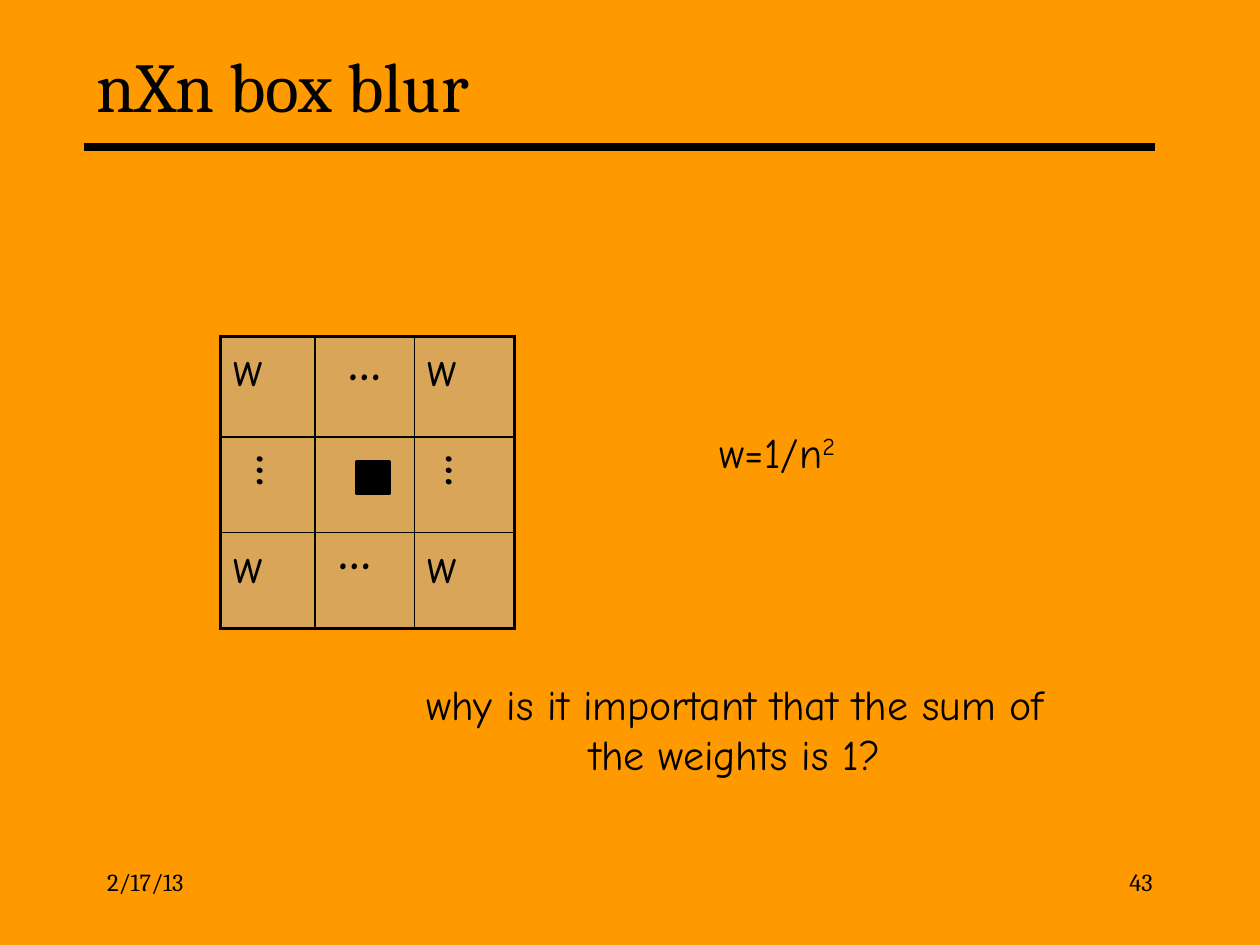
from lxml.etree import SubElement
from pptx import Presentation
from pptx.dml.color import RGBColor
from pptx.enum.shapes import MSO_CONNECTOR as CONN, MSO_SHAPE as SHAPE
from pptx.enum.text import MSO_ANCHOR as ANCHOR, MSO_AUTO_SIZE as AUTO, PP_ALIGN as ALIGN
from pptx.oxml import parse_xml
from pptx.oxml.ns import nsdecls, qn
from pptx.util import Cm, Pt

ORANGE = RGBColor(0xFF, 0x99, 0x00)
BLACK = RGBColor(0, 0, 0)
GRAY = RGBColor(0xB2, 0xB2, 0xB2)
SERIF = "Cambria"
COMIC = "Comic Neue"
COLS = (1.9, 2.01, 2.01)
ROWS = (2.03, 1.93, 1.93)
THICK, THIN = Pt(2.25), Pt(1)


def style(p, name, size, align=None, before=None, bold=None):
    p.alignment = align
    p.space_before = before
    p.font.name = name
    p.font.size = Pt(size)
    p.font.bold = bold
    p.font.color.rgb = BLACK


def add_title(s, text):
    sp = s.shapes.title
    sp.left, sp.top, sp.width, sp.height = Cm(1.7), Cm(0.64), Cm(21.59), Cm(2.11)
    sp.text_frame.text = text
    sp.text_frame.vertical_anchor = ANCHOR.MIDDLE
    style(sp.text_frame.paragraphs[0], SERIF, 40, ALIGN.LEFT)


def add_rule(s, left, right, y):
    c = s.shapes.add_connector(CONN.STRAIGHT, left, y, right, y)
    c.line.color.rgb = BLACK
    c.line.width = Pt(4.5)
    SubElement(c._element.spPr, qn("a:effectLst"))


def add_text(s, text, left, top, width, height, name, size, align=ALIGN.CENTER, before=None):
    sp = s.shapes.add_textbox(left, top, width, height)
    tf = sp.text_frame
    tf.word_wrap = True
    p = tf.paragraphs[0]
    p.text = text
    style(p, name, size, align, before)
    return sp


def add_dots(s, left, top, rotation=0):
    sp = add_text(s, "…", left, top, Cm(1.17), Cm(1.45), COMIC, 28, before=Pt(14))
    sp.rotation = rotation
    tf = sp.text_frame
    tf.word_wrap = False
    tf.auto_size = AUTO.SHAPE_TO_FIT_TEXT
    tf.vertical_anchor = ANCHOR.MIDDLE
    tf.paragraphs[0].font.bold = True


def set_borders(cell, widths):
    tcPr = cell._tc.get_or_add_tcPr()
    for i, (side, width) in enumerate(zip("LRTB", widths)):
        tcPr.insert(i, parse_xml(
            f'<a:ln{side} {nsdecls("a")} w="{width}"><a:solidFill>'
            f'<a:srgbClr val="{BLACK}"/></a:solidFill></a:ln{side}>'))


def set_fill(cell):
    cell.fill.solid()
    cell.fill.fore_color.rgb = GRAY
    color = cell._tc.tcPr.find(qn("a:solidFill")).find(qn("a:srgbClr"))
    SubElement(color, qn("a:alpha")).set("val", "50000")


def add_kernel(s):
    frame = s.shapes.add_table(3, 3, Cm(4.45), Cm(6.78), Cm(sum(COLS)), Cm(sum(ROWS)))
    table = frame.table
    table.first_row = table.horz_banding = False
    for col, width in zip(table.columns, COLS):
        col.width = Cm(width)
    for row, height in zip(table.rows, ROWS):
        row.height = Cm(height)
    for r in range(3):
        for c in range(3):
            cell = table.cell(r, c)
            set_fill(cell)
            outer = (c == 0, c == 2, r == 0, r == 2)
            set_borders(cell, [THICK if edge else THIN for edge in outer])
            if r != 1 and c != 1:
                p = cell.text_frame.paragraphs[0]
                p.text = "w"
                style(p, COMIC, 28, before=Pt(5.6))


def add_center_pixel(s):
    sp = s.shapes.add_shape(SHAPE.RECTANGLE, Cm(7.2), Cm(9.31), Cm(0.64), Cm(0.64))
    sp.shadow.inherit = False
    sp.fill.solid()
    sp.fill.fore_color.rgb = BLACK
    sp.line.color.rgb = BLACK
    sp.line.width = THICK


def add_formula(s):
    sp = add_text(s, "w=1/n", Cm(13.34), Cm(8.47), Cm(4.66), Cm(1.27), COMIC, 24, before=Pt(12))
    r = sp.text_frame.paragraphs[0].add_run()
    r.text = "2"
    r.font._element.set("baseline", "30000")


def main():
    prs = Presentation()
    prs.slide_width, prs.slide_height = Cm(25.4), Cm(19.05)
    s = prs.slides.add_slide(prs.slide_layouts[5])
    s.background.fill.solid()
    s.background.fill.fore_color.rgb = ORANGE
    add_rule(s, Cm(1.7), Cm(23.29), Cm(2.96))
    for text, left, align in (("2/17/13", 1.91, ALIGN.LEFT), ("43", 18.2, ALIGN.RIGHT)):
        add_text(s, text, Cm(left), Cm(17.36), Cm(5.29), Cm(1.27), SERIF, 14, align)
    add_title(s, "nXn box blur")
    add_kernel(s)
    add_center_pixel(s)
    for left, top, rotation in ((5, 8.76, 90), (6.77, 6.56, 0), (6.56, 10.37, 0), (8.81, 8.76, 90)):
        add_dots(s, Cm(left), Cm(top), rotation)
    add_formula(s)
    add_text(s, "why is it important that the sum of the weights is 1?",
             Cm(7.83), Cm(13.55), Cm(13.97), Cm(2.29), COMIC, 24, before=Pt(12))
    prs.save("out.pptx")


if __name__ == "__main__":
    main()
